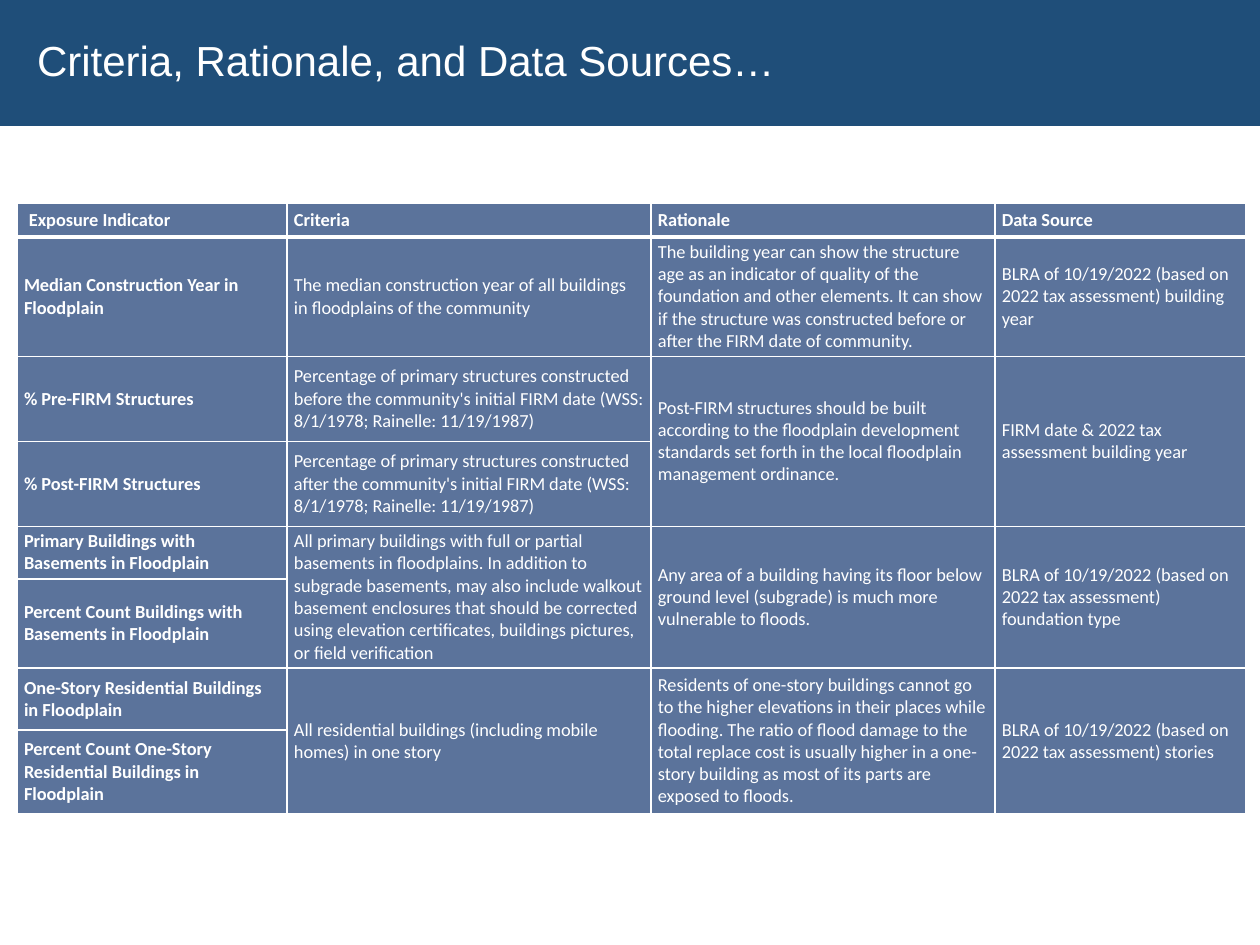
import dataclasses

import lxml.etree
import pptx
import pptx.dml.color
import pptx.enum.text
import pptx.oxml.ns
import pptx.util

PX = 914400 / 126
MIDDLE = pptx.enum.text.MSO_ANCHOR.MIDDLE
LEFT = pptx.enum.text.PP_ALIGN.LEFT


@dataclasses.dataclass(frozen=True)
class Theme:
    banner: str = "1F4E79"
    cell: str = "5B739B"
    light: str = "FFFFFF"
    title_font: str = "Arial"
    table_font: str = "Calibri"
    title_size: float = 24
    table_size: float = 10.5
    line: float = 1
    header_line: float = 2.25


def px(length):
    return pptx.util.Emu(round(length * PX))


def apply(target, values):
    for name, value in values.items():
        setattr(target, name, value)


class SlideBuilder:
    def __init__(self, deck, theme):
        self.theme = theme
        self.page = deck.slides.add_slide(deck.slide_layouts[5])

    def fill(self, target, color):
        target.fill.solid()
        target.fill.fore_color.rgb = pptx.dml.color.RGBColor.from_string(color)

    def add_text(self, para, text, font, size, bold=False):
        span = para.add_run()
        span.text = text
        apply(span.font, {"name": font, "size": pptx.util.Pt(size), "bold": bold})
        span.font.color.rgb = pptx.dml.color.RGBColor.from_string(self.theme.light)

    def title(self, text, left, top, width, height, indent):
        box = self.page.shapes.title
        apply(box, {"left": px(left), "top": px(top), "width": px(width), "height": px(height)})
        self.fill(box, self.theme.banner)
        frame = box.text_frame
        apply(frame, {"vertical_anchor": MIDDLE, "word_wrap": True,
                      "auto_size": pptx.enum.text.MSO_AUTO_SIZE.NONE,
                      "margin_left": px(indent)})
        para = frame.paragraphs[0]
        apply(para, {"alignment": LEFT, "line_spacing": 0.9})
        self.add_text(para, text, self.theme.title_font, self.theme.title_size)

    def borders(self, cell, widths):
        properties = cell._tc.get_or_add_tcPr()
        for index, (side, width) in enumerate(widths.items()):
            line = lxml.etree.Element(pptx.oxml.ns.qn(f"a:ln{side}"), w=str(pptx.util.Pt(width)))
            solid = lxml.etree.SubElement(line, pptx.oxml.ns.qn("a:solidFill"))
            lxml.etree.SubElement(solid, pptx.oxml.ns.qn("a:srgbClr"), val=self.theme.light)
            properties.insert(index, line)

    def cell(self, cell, text, row, column):
        theme = self.theme
        side = 12 if row == column == 0 else 7
        apply(cell, {"vertical_anchor": MIDDLE, "margin_left": px(side), "margin_right": px(side),
                     "margin_top": px(4), "margin_bottom": px(4)})
        self.fill(cell, theme.cell)
        self.borders(cell, {"L": theme.line, "R": theme.line,
                            "T": theme.header_line if row == 1 else theme.line,
                            "B": theme.header_line if row == 0 else theme.line})
        if text:
            para = cell.text_frame.paragraphs[0]
            para.alignment = LEFT
            self.add_text(para, text, theme.table_font, theme.table_size, row == 0 or column == 0)

    def table(self, rows, left, top, widths, heights):
        table = self.page.shapes.add_table(
            len(rows), len(widths), px(left), px(top), px(sum(widths)), px(sum(heights))).table
        for column, width in zip(table.columns, widths):
            column.width = px(width)
        for row, height in zip(table.rows, heights):
            row.height = px(height)
        for r, texts in enumerate(rows):
            for c, text in enumerate(texts):
                self.cell(table.cell(r, c), text, r, c)
                if text is None:
                    table.cell(r - 1, c).merge(table.cell(r, c))


CRITERIA_ROWS = [
    ["Exposure Indicator", "Criteria", "Rationale", "Data Source"],
    ["Median Construction Year in Floodplain",
     "The median construction year of all buildings in floodplains of the community",
     "The building year can show the structure age as an indicator of quality of the foundation "
     "and other elements. It can show if the structure was constructed before or after the FIRM "
     "date of community.",
     "BLRA of 10/19/2022 (based on 2022 tax assessment) building year"],
    ["% Pre-FIRM Structures",
     "Percentage of primary structures constructed before the community's initial FIRM date "
     "(WSS: 8/1/1978; Rainelle: 11/19/1987)",
     "Post-FIRM structures should be built according to the floodplain development standards "
     "set forth in the local floodplain management ordinance.",
     "FIRM date & 2022 tax assessment building year"],
    ["% Post-FIRM Structures",
     "Percentage of primary structures constructed after the community's initial FIRM date "
     "(WSS: 8/1/1978; Rainelle: 11/19/1987)",
     None, None],
    ["Primary Buildings with Basements in Floodplain",
     "All primary buildings with full or partial basements in floodplains. In addition to "
     "subgrade basements, may also include walkout basement enclosures that should be corrected "
     "using elevation certificates, buildings pictures, or field verification",
     "Any area of a building having its floor below ground level (subgrade) is much more "
     "vulnerable to floods.",
     "BLRA of 10/19/2022 (based on 2022 tax assessment) foundation type"],
    ["Percent Count Buildings with Basements in Floodplain", None, None, None],
    ["One-Story Residential Buildings in Floodplain",
     "All residential buildings (including mobile homes) in one story",
     "Residents of one-story buildings cannot go to the higher elevations in their places while "
     "flooding. The ratio of flood damage to the total replace cost is usually higher in a "
     "one-story building as most of its parts are exposed to floods.",
     "BLRA of 10/19/2022 (based on 2022 tax assessment) stories"],
    ["Percent Count One-Story Residential Buildings in Floodplain", None, None, None],
]


def main():
    deck = pptx.Presentation()
    apply(deck, {"slide_width": px(1260), "slide_height": px(945)})
    builder = SlideBuilder(deck, Theme())
    builder.title("Criteria, Rationale, and Data Sources…", 0, 0, 1260, 126, 37)
    builder.table(CRITERIA_ROWS, 17, 203, [270, 364, 344, 251],
                  [34, 119, 85, 85, 52, 89, 62, 84])
    deck.save("out.pptx")


if __name__ == "__main__":
    main()
